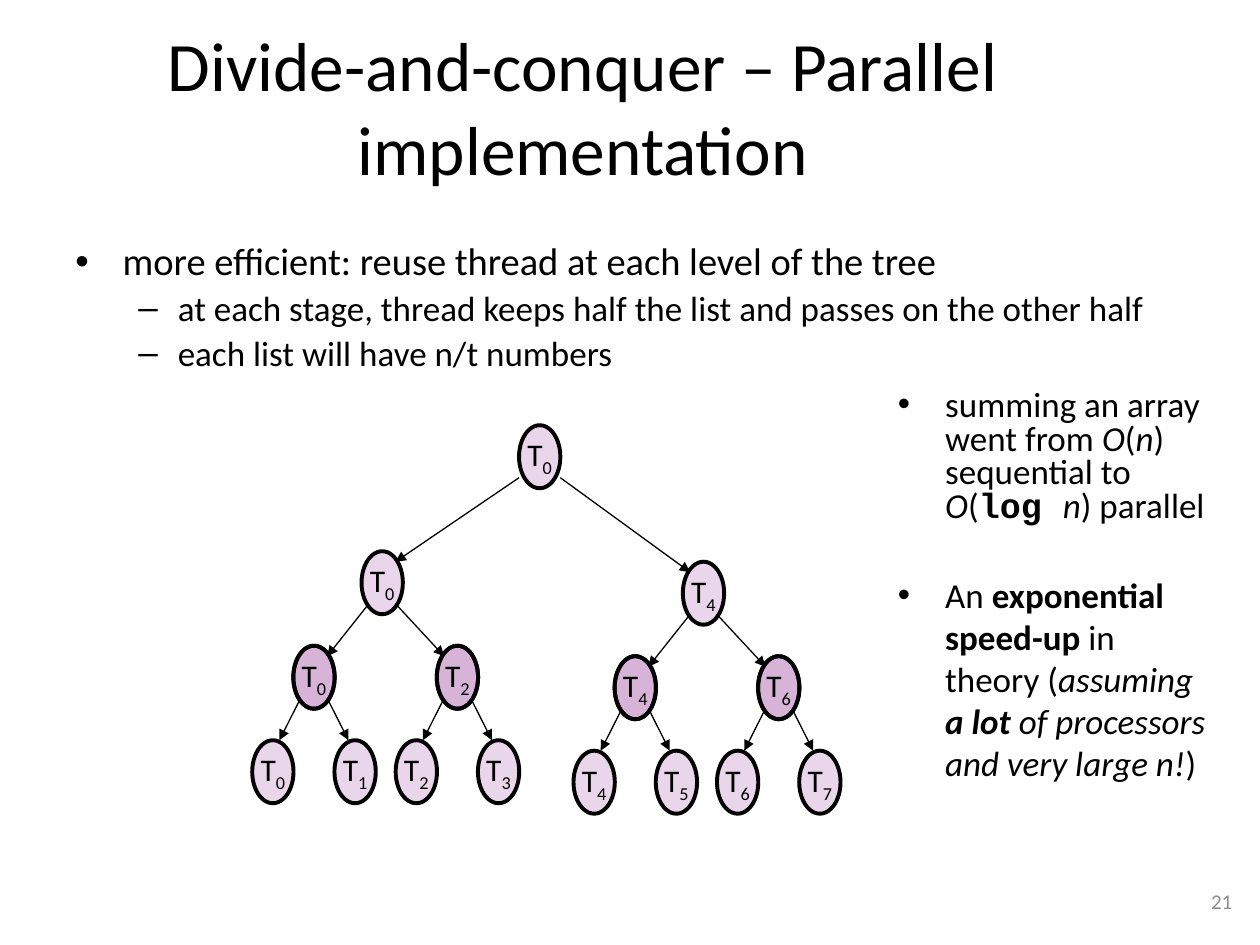
from lxml.etree import SubElement
from pptx import Presentation
from pptx.dml.color import RGBColor
from pptx.enum.shapes import MSO_CONNECTOR, MSO_SHAPE
from pptx.enum.text import MSO_ANCHOR, PP_ALIGN
from pptx.oxml.ns import qn
from pptx.util import Pt

BLACK, PURPLE, GREY = "000000", "800080", "8C8C8C"
ITALIC, BOLD = {"italic": True}, {"bold": True}
NODE_WIDTH, NODE_HEIGHT = 23.6, 36
# For each tree level: left and right child offsets, inset of the arrow
# at the parent, and inset and drop of the arrowhead at the child.
LEVELS = [
    (((-90, 72), (93.6, 78)), 0, 4.2, 6),
    (((-39, 54), (43, 54)), 4.2, 4.2, 6),
    (((-23.5, 54), (23.5, 54)), 4.2, 8, 0),
]


def color(value):
    return RGBColor.from_string(value)


def add_span(para, text, size, tint=BLACK, **extra):
    span = para.add_run()
    span.text = text
    formats = {"name": "Calibri", "size": Pt(size), **extra}
    for name, value in formats.items():
        setattr(span.font, name, value)
    span.font.color.rgb = color(tint)
    return span


def set_bullet(para, mark, margin, hang):
    props = para._p.get_or_add_pPr()
    props.set("marL", str(Pt(margin)))
    props.set("indent", str(-Pt(hang)))
    SubElement(props, qn("a:buFont"), typeface="Arial")
    SubElement(props, qn("a:buChar"), char=mark)


def add_bullets(page, box, items):
    """Each item: mark, margin, hang, size, spacing, space before, spans."""
    frame = page.shapes.add_textbox(*map(Pt, box)).text_frame
    frame.word_wrap = True
    for index, (mark, margin, hang, size, spacing, before, spans) in enumerate(items):
        para = frame.add_paragraph() if index else frame.paragraphs[0]
        para.line_spacing = spacing
        para.space_before = Pt(before)
        set_bullet(para, mark, margin, hang)
        for text, formats in spans:
            add_span(para, text, size, **formats)


def add_title(page, box, text):
    title = page.shapes.title
    for name, value in zip(("left", "top", "width", "height"), box):
        setattr(title, name, Pt(value))
    frame = title.text_frame
    frame.word_wrap = True
    frame.vertical_anchor = MSO_ANCHOR.MIDDLE
    para = frame.paragraphs[0]
    para.alignment = PP_ALIGN.CENTER
    add_span(para, text, 39.6)


def add_arrow(page, start, end):
    arrow = page.shapes.add_connector(MSO_CONNECTOR.STRAIGHT, *map(Pt, start + end))
    arrow.line.width = Pt(0.75)
    arrow.line.color.rgb = color(BLACK)
    SubElement(arrow.line._get_or_add_ln(), qn("a:tailEnd"), type="triangle")
    SubElement(arrow._element.spPr, qn("a:effectLst"))


def add_ellipse(page, x, y):
    ellipse = page.shapes.add_shape(
        MSO_SHAPE.OVAL, *map(Pt, (x, y, NODE_WIDTH, NODE_HEIGHT)))
    ellipse.shadow.inherit = False
    ellipse.fill.solid()
    ellipse.fill.fore_color.rgb = color(PURPLE)
    tint = ellipse._element.spPr.find(qn("a:solidFill"))[0]
    SubElement(tint, qn("a:alpha"), val="16000")
    ellipse.line.color.rgb = color(BLACK)
    ellipse.line.width = Pt(2.25)
    return ellipse


def add_thread(page, x, y, thread):
    frame = add_ellipse(page, x, y).text_frame
    frame.word_wrap = False
    frame.vertical_anchor = MSO_ANCHOR.MIDDLE
    para = frame.paragraphs[0]
    para.alignment = PP_ALIGN.CENTER
    add_span(para, "T", 18)
    index = add_span(para, str(thread), 18)
    index.font._element.set("baseline", "-25000")


def add_tree(page, x, y, thread=0, depth=0):
    """Draw the node at x, y and, below it, the threads it passes work to."""
    if depth == 2:
        add_ellipse(page, x, y)  # a second layer deepens the tint
    add_thread(page, x, y, thread)
    if depth == len(LEVELS):
        return
    offsets, start_inset, end_inset, drop = LEVELS[depth]
    for side, (dx, dy) in enumerate(offsets):
        child_x, child_y = x + dx, y + dy
        start_x = x + (NODE_WIDTH - start_inset if side else start_inset)
        end_x = child_x + (end_inset if side else NODE_WIDTH - end_inset)
        add_arrow(page, (start_x, y + 30), (end_x, child_y + drop))
        add_tree(page, child_x, child_y, thread + side * (4 >> depth), depth + 1)


def add_page_number(page, box, text):
    frame = page.shapes.add_textbox(*map(Pt, box)).text_frame
    frame.word_wrap = True
    frame.vertical_anchor = MSO_ANCHOR.MIDDLE
    para = frame.paragraphs[0]
    para.alignment = PP_ALIGN.CENTER
    add_span(para, text, 12, GREY)


def main():
    deck = Presentation()
    deck.slide_width, deck.slide_height = Pt(720), Pt(540)
    page = deck.slides.add_slide(deck.slide_layouts[5])
    add_title(page, (36, 9.4, 594, 102), "Divide-and-conquer – Parallel implementation")
    add_bullets(page, (36, 135, 649, 347), [
        ("•", 27, 27, 22, 0.9, 4.4,
         [("more efficient: reuse thread at each level of the tree", {})]),
        ("–", 58.5, 22.5, 20, 0.9, 4,
         [("at each stage, thread keeps half the list and passes on the other half", {})]),
        ("–", 58.5, 22.5, 20, 0.9, 4, [("each list will have n/t numbers", {})]),
    ])
    add_tree(page, 296.6, 243)
    add_bullets(page, (506, 219.6, 190, 245.5), [
        ("•", 27, 27, 20, 0.8, 4, [
            ("summing an array went from ", {}), ("O", ITALIC), ("(", {}),
            ("n", ITALIC), (") sequential to ", {}), ("O", ITALIC), ("(", {}),
            ("log ", {"name": "Courier New", "bold": True}),
            ("n", ITALIC), (") parallel", {})]),
        ("•", 27, 27, 20, 1.0, 27.5, [
            ("An ", {}), ("exponential speed-up ", BOLD), ("in theory (", {}),
            ("assuming ", ITALIC), ("a lot", {**BOLD, **ITALIC}),
            (" of processors and very large n!", ITALIC), (")", {})]),
    ])
    add_page_number(page, (678, 500.4, 40.3, 28.8), "21")
    deck.save("out.pptx")


if __name__ == "__main__":
    main()
